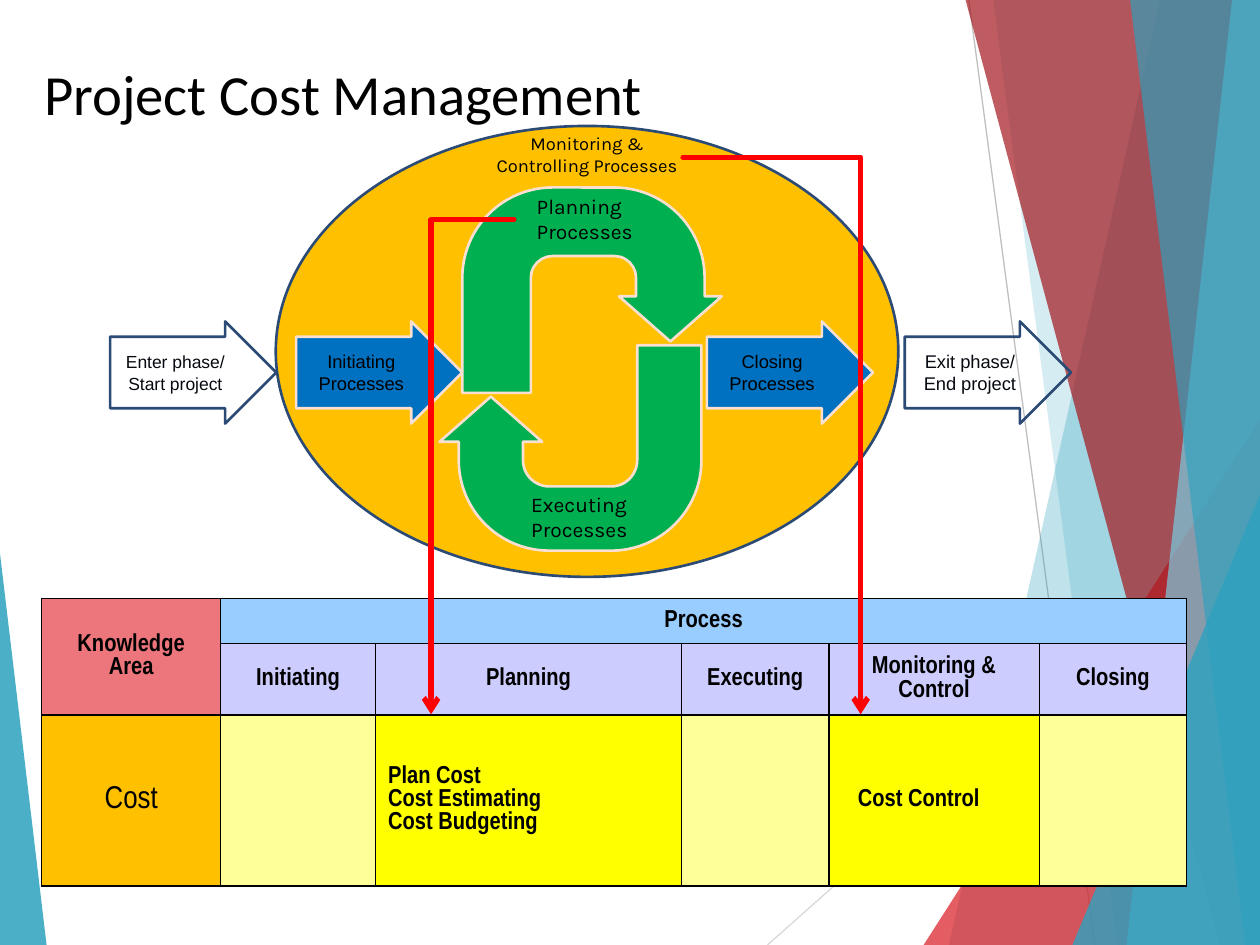
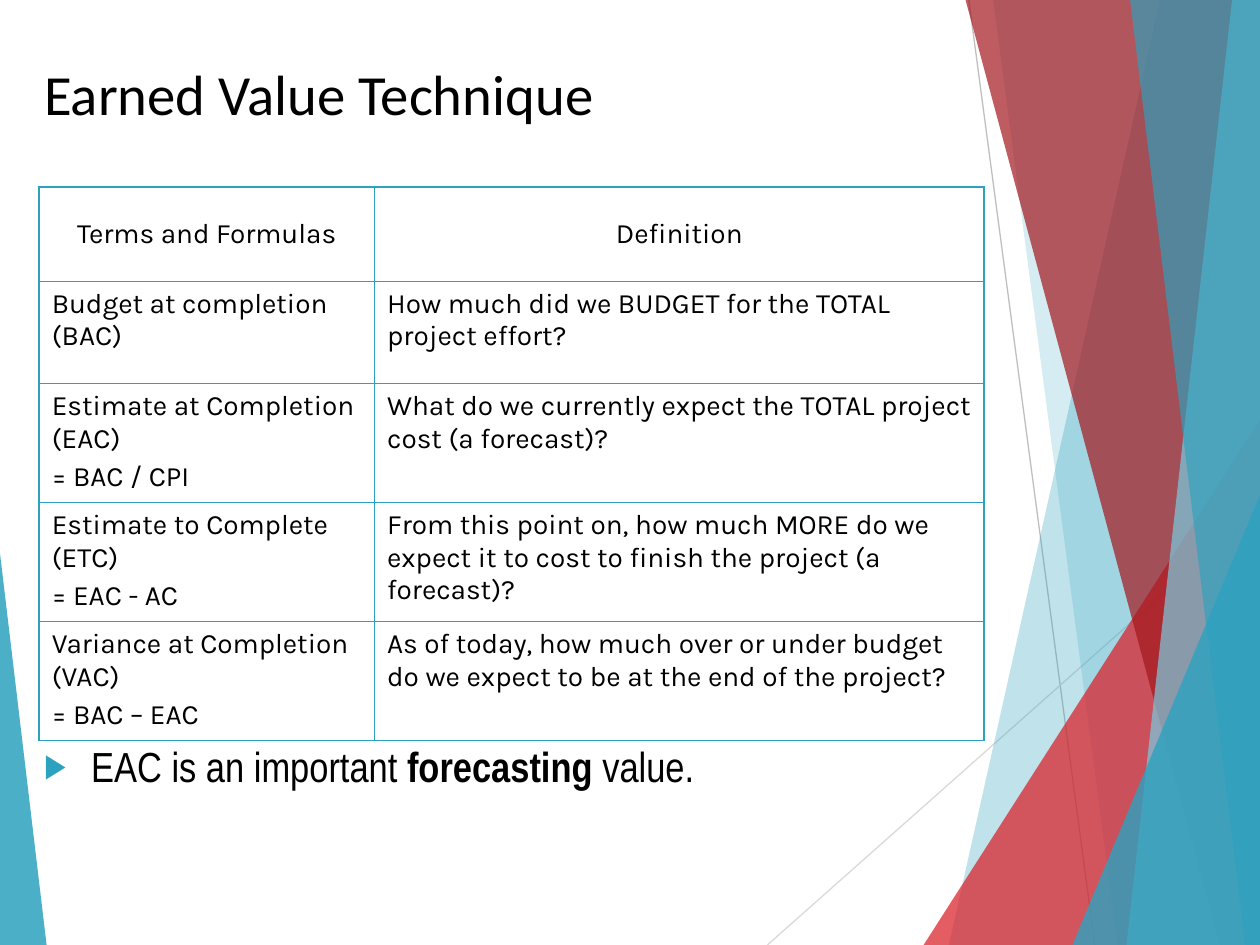
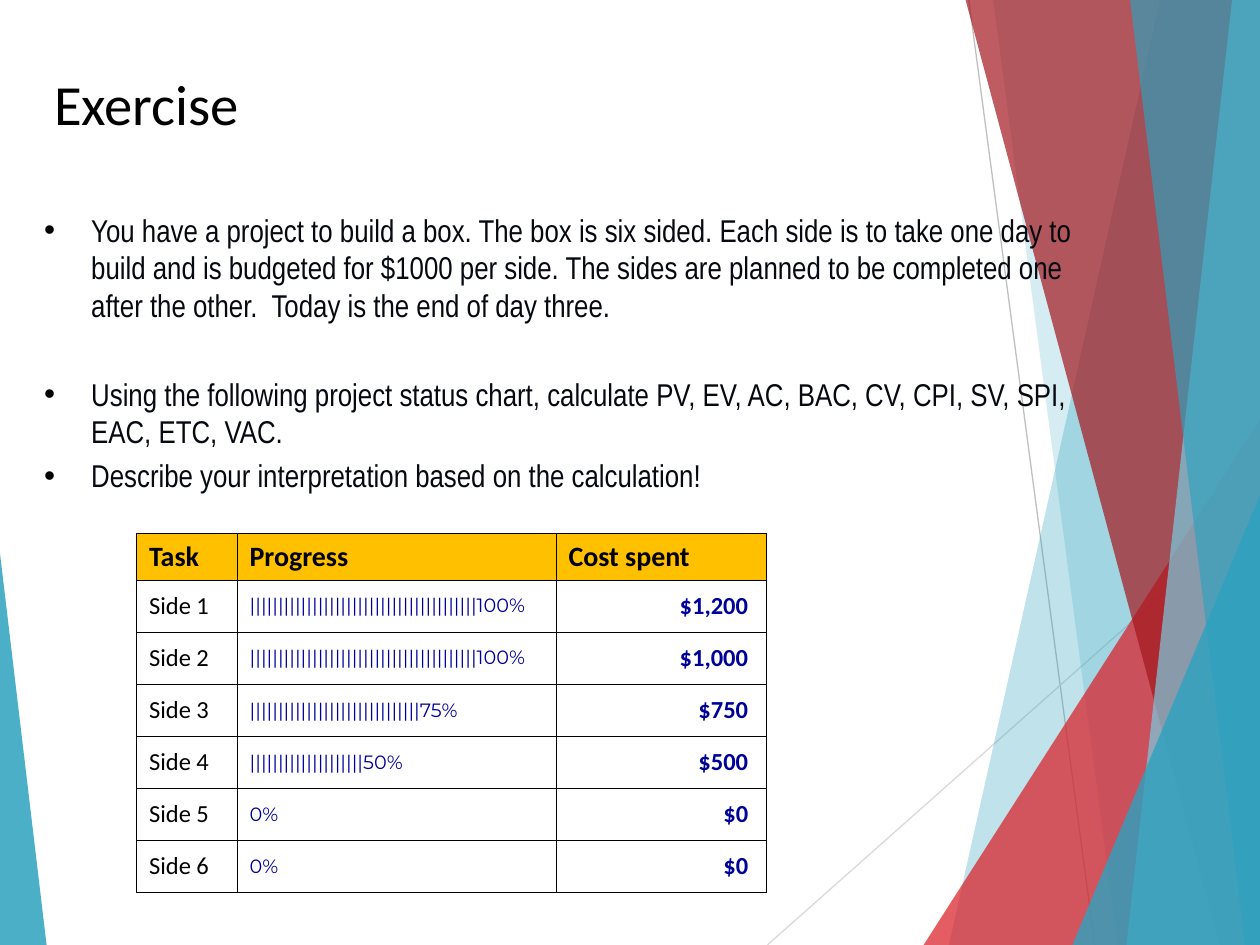
from dataclasses import dataclass
from typing import NamedTuple

from lxml import etree
from pptx import Presentation
from pptx import util as u
from pptx.dml import color
from pptx.enum import shapes, text
from pptx.oxml import ns

WIDTH, HEIGHT = 25.4, 19.05
BLACK, INK, NAVY = "000000", "060A10", "2B4A76"
TEAL, AMBER, GREEN, BLUE = "2DA2BF", "FFC000", "00B050", "0070C0"
CREAM, RED, PROGRESS_BLUE = "FBE0D1", "FF0000", "000099"
PALE_YELLOW, YELLOW, LILAC = "FFFF99", "FFFF00", "CCCCFF"
LEFT, CENTER, RIGHT = text.PP_ALIGN.LEFT, text.PP_ALIGN.CENTER, text.PP_ALIGN.RIGHT
TOP, MIDDLE = text.MSO_ANCHOR.TOP, text.MSO_ANCHOR.MIDDLE
SHAPE = shapes.MSO_SHAPE


class Box(NamedTuple):
    left: float
    top: float
    width: float
    height: float

    def lengths(self) -> list:
        return [u.Cm(value) for value in self]


class Run(NamedTuple):
    words: str
    bold: bool = False


@dataclass
class Ray:
    start: tuple
    end: tuple
    colour: str


@dataclass
class Band:
    top_x: float
    bottom_x: float
    colour: str
    opacity: int


@dataclass
class Wedge:
    box: Box
    apex: float
    colour: str
    opacity: int


@dataclass
class PhaseArrow:
    left: float
    words: str
    fill: str | None
    line: str
    ink: str
    size: float = 10.5


@dataclass
class Turn:
    box: Box
    thickness: float
    rotation: int
    words: str
    label: Box


@dataclass
class Term:
    name: str
    definition: str


@dataclass
class Side:
    percent: int
    spent: int


RAYS = [
    Ray((19.53, 0), (22.07, HEIGHT), "BFBFBF"),
    Ray((WIDTH, 10.24), (15.47, HEIGHT), "D9D9D9"),
]
FACETS = [
    Band(23.39, 19.13, TEAL, 30),
    Band(20.02, 22.53, TEAL, 20),
    Wedge(Box(18.62, 8.46, 6.78, 10.59), 1, "DA1F28", 72),
    Band(19.46, 24.59, "A3171E", 70),
    Band(24.84, 22.71, "7ACBE0", 70),
    Band(22.78, 25.1, TEAL, 65),
    Wedge(Box(21.62, 9.98, 3.78, 9.07), 1, TEAL, 80),
    Wedge(Box(0, 11.15, 0.94, 7.9), 0, TEAL, 85),
]
PHASES = [
    PhaseArrow(2.22, "Enter phase/\nStart project", None, NAVY, INK, 10),
    PhaseArrow(18.24, "Exit phase/\nEnd project", None, NAVY, INK),
    PhaseArrow(5.97, "Initiating\nProcesses", BLUE, CREAM, BLACK),
    PhaseArrow(14.25, "Closing\nProcesses", BLUE, CREAM, BLACK),
]
TURNS = [
    Turn(Box(9.32, 3.78, 5.23, 4.14), 0.334, 0,
         "Planning\nProcesses", Box(10.57, 3.78, 2.72, 1.24)),
    Turn(Box(8.86, 6.96, 5.28, 4.14), 0.313, 180,
         "Executing\nProcesses", Box(10.46, 9.78, 2.72, 1.24)),
]
TERMS = [
    Term("Budget at completion (BAC)",
         "How much did we BUDGET for the TOTAL project effort?"),
    Term("Estimate at Completion (EAC)\n= BAC / CPI",
         "What do we currently expect the TOTAL project cost (a forecast)?"),
    Term("Estimate to Complete (ETC)\n= EAC - AC",
         "From this point on, how much MORE do we expect it to cost to finish "
         "the project (a forecast)?"),
    Term("Variance at Completion (VAC)\n= BAC – EAC",
         "As of today, how much over or under budget do we expect to be at the "
         "end of the project?"),
]
SIDES = [Side(100, 1200), Side(100, 1000), Side(75, 750),
         Side(50, 500), Side(0, 0), Side(0, 0)]
BRIEF = [
    "You have a project to build a box. The box is six sided. Each side is to "
    "take one day to build and is budgeted for $1000 per side. The sides are "
    "planned to be completed one after the other.  Today is the end of day three.",
    "Using the following project status chart, calculate PV, EV, AC, BAC, CV, "
    "CPI, SV, SPI, EAC, ETC, VAC.",
    "Describe your interpretation based on the calculation!",
]


def rgb(code: str) -> color.RGBColor:
    return color.RGBColor.from_string(code)


def add_node(parent, tag: str, **attributes):
    return etree.SubElement(parent, ns.qn(tag), **attributes)


def paint(shape, fill: str | None, line: str | None = None,
          opacity: int = 100) -> None:
    shape.shadow.inherit = False
    if fill:
        shape.fill.solid()
        shape.fill.fore_color.rgb = rgb(fill)
        if opacity < 100:
            tint = shape.element.spPr.find(".//" + ns.qn("a:srgbClr"))
            add_node(tint, "a:alpha", val=str(opacity * 1000))
    else:
        shape.fill.background()
    if line:
        shape.line.color.rgb = rgb(line)
        shape.line.width = u.Pt(1.5)
    else:
        shape.line.fill.background()


def add_bullet(paragraph, bullet: str, tint: str, percent: int) -> None:
    properties = paragraph._p.get_or_add_pPr()
    add_node(add_node(properties, "a:buClr"), "a:srgbClr", val=tint)
    add_node(properties, "a:buSzPct", val=str(percent * 1000))
    add_node(properties, "a:buFont", typeface="Arial")
    add_node(properties, "a:buChar", char=bullet)


def write(frame, content: str | list, *, size: float, font: str,
          ink: str = BLACK, bold: bool = False, align=LEFT, before: float = 0,
          margin: float = 0, hanging: float = 0, bullet: str = "",
          bullet_ink: str = BLACK, bullet_size: int = 100):
    frame.word_wrap = True
    lines = content.split("\n") if isinstance(content, str) else content
    for index, line in enumerate(lines):
        paragraph = frame.add_paragraph() if index else frame.paragraphs[0]
        paragraph.alignment = align
        if index and before:
            paragraph.space_before = u.Pt(before)
        if margin:
            properties = paragraph._p.get_or_add_pPr()
            properties.set("marL", str(u.Cm(margin)))
            properties.set("indent", str(-u.Cm(hanging)))
        if bullet:
            add_bullet(paragraph, bullet, bullet_ink, bullet_size)
        for part in [Run(line, bold)] if isinstance(line, str) else line:
            run = paragraph.add_run()
            run.text = part.words
            run.font.size = u.Pt(size)
            run.font.name = font
            run.font.bold = part.bold
            run.font.color.rgb = rgb(ink)
    return frame.paragraphs


def add_words(slide, box: Box, content: str | list, **style):
    frame = slide.shapes.add_textbox(*box.lengths()).text_frame
    return write(frame, content, **style)


def add_line(slide, kind, start: tuple, end: tuple, colour: str, width: float):
    points = [u.Cm(value) for value in (*start, *end)]
    line = slide.shapes.add_connector(kind, *points)
    line.line.color.rgb = rgb(colour)
    line.line.width = u.Pt(width)
    add_node(line.element.spPr, "a:effectLst")
    return line


def draw_band(slide, band: Band) -> None:
    top = -0.02
    corners = [(band.top_x, top), (WIDTH, top), (WIDTH, HEIGHT),
               (band.bottom_x, HEIGHT)]
    first, *others = [(u.Cm(x), u.Cm(y)) for x, y in corners]
    outline = slide.shapes.build_freeform(*first)
    outline.add_line_segments(others, close=True)
    paint(outline.convert_to_shape(), band.colour, opacity=band.opacity)


def draw_wedge(slide, wedge: Wedge) -> None:
    triangle = slide.shapes.add_shape(SHAPE.ISOSCELES_TRIANGLE,
                                      *wedge.box.lengths())
    triangle.adjustments[0] = wedge.apex
    paint(triangle, wedge.colour, opacity=wedge.opacity)


def start_slide(deck, title: str, box: Box = Box(0.64, 1.07, 21.16, 1.27)):
    slide = deck.slides.add_slide(deck.slide_layouts[6])
    for ray in RAYS:
        add_line(slide, shapes.MSO_CONNECTOR.STRAIGHT, ray.start, ray.end,
                 ray.colour, 0.75)
    for facet in FACETS:
        if isinstance(facet, Band):
            draw_band(slide, facet)
        else:
            draw_wedge(slide, facet)
    add_words(slide, box, title, size=32.4, font="Calibri")
    return slide


def add_grid(slide, left: float, top: float, columns: list, rows: list,
             border: str, thickness: float):
    box = Box(left, top, sum(columns), sum(rows))
    grid = slide.shapes.add_table(len(rows), len(columns), *box.lengths()).table
    grid.first_row = grid.horz_banding = False
    for column, width in zip(grid.columns, columns):
        column.width = u.Cm(width)
    for row, height in zip(grid.rows, rows):
        row.height = u.Cm(height)
    for cell in grid.iter_cells():
        cell.fill.background()
        properties = cell._tc.get_or_add_tcPr()
        for index, edge in enumerate(("a:lnL", "a:lnR", "a:lnT", "a:lnB")):
            line = etree.Element(ns.qn(edge), w=str(u.Pt(thickness)))
            add_node(add_node(line, "a:solidFill"), "a:srgbClr", val=border)
            properties.insert(index, line)
    return grid


def fill_cell(cell, content: str, fill: str | None = None, anchor=MIDDLE,
              **style) -> None:
    cell.vertical_anchor = anchor
    if fill:
        cell.fill.solid()
        cell.fill.fore_color.rgb = rgb(fill)
    if content:
        write(cell.text_frame, content, **style)


def draw_phase(slide, phase: PhaseArrow) -> None:
    arrow = slide.shapes.add_shape(SHAPE.RIGHT_ARROW,
                                   *Box(phase.left, 6.48, 3.35, 2.06).lengths())
    arrow.adjustments[0] = 0.7
    paint(arrow, phase.fill, phase.line)
    arrow.text_frame.vertical_anchor = MIDDLE
    write(arrow.text_frame, phase.words, size=phase.size, font="Arial",
          ink=phase.ink, align=CENTER)


def draw_turn(slide, turn: Turn) -> None:
    arrow = slide.shapes.add_shape(SHAPE.U_TURN_ARROW, *turn.box.lengths())
    for index, value in enumerate((turn.thickness, 0.25, 0.22, 0.44, 0.75)):
        arrow.adjustments[index] = value
    arrow.rotation = turn.rotation
    paint(arrow, GREEN, CREAM)


def draw_pointer(slide, start: tuple, end: tuple) -> None:
    across, down = end[0] - start[0], end[1] - start[1]
    middle_x, middle_y = start[0] + across / 2, start[1] + down / 2
    rightward = across > 0
    half = down / 2 if rightward else -down / 2
    pointer = add_line(slide, shapes.MSO_CONNECTOR.ELBOW,
                       (middle_x + half, middle_y - abs(across) / 2),
                       (middle_x - half, middle_y + abs(across) / 2), RED, 3)
    properties = pointer.element.spPr
    properties.find(ns.qn("a:xfrm")).set("rot", str((270 if rightward else 90) * 60000))
    add_node(properties.find(".//" + ns.qn("a:avLst")), "a:gd",
             name="adj1", fmla="val 0")
    stroke = properties.find(ns.qn("a:ln"))
    stroke.set("cap", "rnd")
    add_node(stroke, "a:tailEnd", type="arrow")


def build_cost_management(deck) -> None:
    slide = start_slide(deck, "Project Cost Management")
    grid = add_grid(slide, 0.84, 12.07, [3.61, 3.12, 6.17, 2.97, 4.24, 2.97],
                    [0.9, 1.19, 3.45], BLACK, 1)
    grid.cell(0, 0).merge(grid.cell(1, 0))
    grid.cell(0, 1).merge(grid.cell(0, 5))
    narrow = dict(size=14, font="Arial Narrow", bold=True)
    heading = dict(narrow, align=CENTER)
    fill_cell(grid.cell(0, 0), "Knowledge Area", "EC767C", **heading)
    fill_cell(grid.cell(0, 1), "Process", "99CCFF", **heading)
    groups = ["Initiating", "Planning", "Executing", "Monitoring & Control", "Closing"]
    for column, group in enumerate(groups, 1):
        fill_cell(grid.cell(1, column), group, LILAC, **heading)
        fill_cell(grid.cell(2, column), "", PALE_YELLOW)
    fill_cell(grid.cell(2, 0), "Cost", AMBER, **dict(heading, size=18, bold=False))
    fill_cell(grid.cell(2, 2), "Plan Cost\nCost Estimating\nCost Budgeting",
              YELLOW, **narrow)
    fill_cell(grid.cell(2, 4), "Cost Control", YELLOW, margin=0.33, **narrow)

    monitoring = slide.shapes.add_shape(SHAPE.OVAL,
                                        *Box(5.56, 2.54, 12.55, 9.09).lengths())
    paint(monitoring, AMBER, NAVY)
    for phase in PHASES:
        draw_phase(slide, phase)
    for turn in TURNS:
        draw_turn(slide, turn)
    for turn in TURNS:
        add_words(slide, turn.label, turn.words, size=12, font="Karla")
    add_words(slide, Box(9.32, 2.54, 5.03, 1.19),
              "Monitoring &\nControlling Processes", size=10.5, font="Karla",
              align=CENTER)
    draw_pointer(slide, (10.36, 4.43), (8.69, 14.4))
    draw_pointer(slide, (13.77, 3.17), (17.35, 14.4))


def build_earned_value(deck) -> None:
    slide = start_slide(deck, "Earned Value Technique")
    add_words(slide, Box(0.64, 14.81, 22.23, 1.47),
              [[Run("EAC is an important "), Run("forecasting", True), Run(" value.")]],
              size=24, font="Arial Narrow", margin=0.95, hanging=0.95,
              bullet="▶", bullet_ink=TEAL, bullet_size=80)
    grid = add_grid(slide, 0.79, 3.77, [6.76, 12.29],
                    [1.9] + [2.06] * len(TERMS), TEAL, 1)
    body = dict(size=16, font="Karla", before=3.2)
    for column, heading in enumerate(("Terms and Formulas", "Definition")):
        fill_cell(grid.cell(0, column), heading, align=CENTER, **body)
    for row, term in enumerate(TERMS, 1):
        fill_cell(grid.cell(row, 0), term.name, anchor=TOP, **body)
        fill_cell(grid.cell(row, 1), term.definition, anchor=TOP, **body)


def build_exercise(deck) -> None:
    slide = start_slide(deck, "Exercise", Box(0.84, 1.27, 21.16, 1.07))
    grid = add_grid(slide, 2.75, 10.75, [2.03, 6.43, 4.24],
                    [0.94] + [1.05] * len(SIDES), BLACK, 0.5)
    for column, heading in enumerate(("Task", "Progress", "Cost spent")):
        fill_cell(grid.cell(0, column), heading, AMBER, size=16, font="Calibri",
                  bold=True)
    for row, side in enumerate(SIDES, 1):
        fill_cell(grid.cell(row, 0), f"Side {row}", size=14, font="Calibri")
        fill_cell(grid.cell(row, 1), "|" * (side.percent * 2 // 5) + f"{side.percent}%",
                  size=11, font="Montserrat", ink=PROGRESS_BLUE)
        fill_cell(grid.cell(row, 2), f"${side.spent:,} ", size=14, font="Calibri",
                  ink=PROGRESS_BLUE, bold=True, align=RIGHT)
    points = add_words(slide, Box(0.64, 4.12, 22.1, 6.55), BRIEF, size=18,
                       font="Arial Narrow", ink=INK, before=3.6, margin=0.95,
                       hanging=0.95, bullet="•")
    points[1].space_before = u.Pt(28.9)


def main() -> None:
    deck = Presentation()
    deck.slide_width, deck.slide_height = u.Cm(WIDTH), u.Cm(HEIGHT)
    build_cost_management(deck)
    build_earned_value(deck)
    build_exercise(deck)
    deck.save("out.pptx")


if __name__ == "__main__":
    main()
